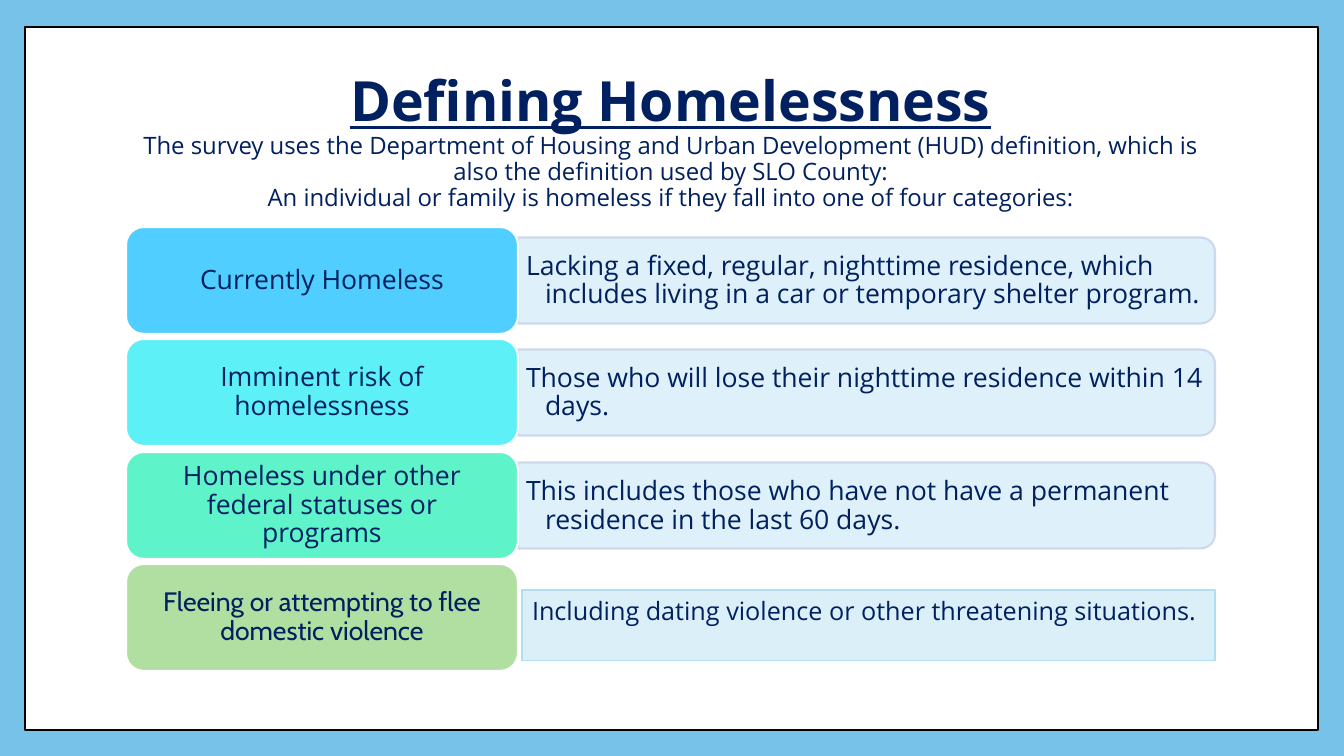
from lxml import etree
from pptx import Presentation
from pptx import util as u
from pptx.dml.color import RGBColor
from pptx.enum import shapes, text
from pptx.oxml.ns import qn

EMU_PER_PX = 12192000 / 1344
COLOURS = {
    "sky": "77C2E8", "white": "FFFFFF", "black": "000000", "navy": "002060",
    "pale": "DBEFF9", "lilac": "CCD5EA", "pale_edge": "B3DDF2",
    "blue": "4FCEFF", "cyan": "5EF0F7", "mint": "5FF3CA", "green": "B0DFA1",
}
CATEGORIES = [
    ("Currently Homeless", "blue", "Open Sans",
     "Lacking a fixed, regular, nighttime residence, which includes living "
     "in a car or temporary shelter program."),
    ("Imminent risk of homelessness", "cyan", "Open Sans",
     "Those who will lose their nighttime residence within 14 days."),
    ("Homeless under other federal statuses or programs", "mint", "Open Sans",
     "This includes those who have not have a permanent residence "
     "in the last 60 days."),
    ("Fleeing or attempting to flee domestic violence", "green", "Cabin",
     "Including dating violence or other threatening situations."),
]
INTRO = [
    "The survey uses the Department of Housing and Urban Development (HUD) "
    "definition, which is also the definition used by SLO County:",
    "An individual or family is homeless if they fall into one of four categories:",
]
ROW_TOP, ROW_HEIGHT = 227, 107
LABEL_LEFT, LABEL_WIDTH = 126, 392
BAR_LEFT, BAR_WIDTH, BAR_HEIGHT = 518, 697, 86


def px(length):
    return u.Emu(round(length * EMU_PER_PX))


def colour(name):
    return RGBColor.from_string(COLOURS[name])


def set_font(font, size, name="Open Sans"):
    font.name = name
    font.size = u.Pt(size)
    font.color.rgb = colour("navy")


def add_block(page, kind, area, fill, line, width):
    block = page.shapes.add_shape(kind, *map(px, area))
    block.shadow.inherit = False
    block.fill.solid()
    block.fill.fore_color.rgb = colour(fill)
    block.line.color.rgb = colour(line)
    block.line.width = u.Pt(width)
    return block


def set_frame(box, side, end, anchor=text.MSO_ANCHOR.MIDDLE):
    frame = box.text_frame
    frame.word_wrap = True
    frame.vertical_anchor = anchor
    frame.margin_left = frame.margin_right = px(side)
    frame.margin_top = frame.margin_bottom = px(end)
    return frame


def write(frame, words, size, align, font="Open Sans", spacing=0.9):
    para = frame.paragraphs[0]
    para.text = words
    para.alignment = align
    para.line_spacing = spacing
    set_font(para.font, size, font)
    return para


def add_heading(page):
    box = page.shapes.add_textbox(*map(px, (126, 68, 1089, 149)))
    para = set_frame(box, 10, 5).paragraphs[0]
    para.alignment = text.PP_ALIGN.CENTER
    para.line_spacing = 0.9
    span = para.add_run()
    span.text = "Defining Homelessness"
    set_font(span.font, 39.6)
    span.font.bold = span.font.underline = True
    for sentence in INTRO:
        para.add_line_break()
        span = para.add_run()
        span.text = sentence
        set_font(span.font, 17.1)


def add_label(page, top, words, fill, font):
    label = add_block(page, shapes.MSO_SHAPE.ROUNDED_RECTANGLE,
                      (LABEL_LEFT, top, LABEL_WIDTH, ROW_HEIGHT), fill, "white", 1.5)
    write(set_frame(label, 13, 9), words, 19, text.PP_ALIGN.CENTER, font)


def add_bar(page, top, words):
    # A tall shape turned a quarter, so its round corners face right
    left = BAR_LEFT + (BAR_WIDTH - BAR_HEIGHT) / 2
    upper = top + (ROW_HEIGHT - BAR_WIDTH) / 2
    bar = add_block(page, shapes.MSO_SHAPE.ROUND_2_SAME_RECTANGLE,
                    (left, upper, BAR_HEIGHT, BAR_WIDTH), "pale", "lilac", 1.5)
    bar.rotation = 90
    for tint in bar._element.spPr.iter(qn("a:srgbClr")):
        etree.SubElement(tint, qn("a:alpha"), val="90000")

    box = page.shapes.add_textbox(*map(px, (BAR_LEFT, top + 15, 693, 78)))
    para = write(set_frame(box, 8, 4), words, 19, text.PP_ALIGN.LEFT)
    props = para._p.get_or_add_pPr()
    props.set("marL", str(px(19)))
    props.set("indent", str(px(-19)))


def add_note(page, words):
    note = add_block(page, shapes.MSO_SHAPE.RECTANGLE, (522, 590, 693, 71),
                     "pale", "pale_edge", 0.75)
    frame = set_frame(note, 10, 5, text.MSO_ANCHOR.TOP)
    write(frame, words, 18, text.PP_ALIGN.LEFT, spacing=1.0)


def main():
    deck = Presentation()
    deck.slide_width, deck.slide_height = px(1344), px(756)
    page = deck.slides.add_slide(deck.slide_layouts[6])

    # Background and frame
    page.background.fill.solid()
    page.background.fill.fore_color.rgb = colour("sky")
    add_block(page, shapes.MSO_SHAPE.RECTANGLE, (25, 27, 1293, 703),
              "white", "black", 1)
    add_heading(page)

    # One row per category; the last has a plain note instead of a bar
    for row, (name, fill, font, meaning) in enumerate(CATEGORIES):
        top = ROW_TOP + row * 225 // 2
        if row < len(CATEGORIES) - 1:
            add_bar(page, top, meaning)
        else:
            add_note(page, meaning)
        add_label(page, top, name, fill, font)

    deck.save("out.pptx")


if __name__ == "__main__":
    main()
